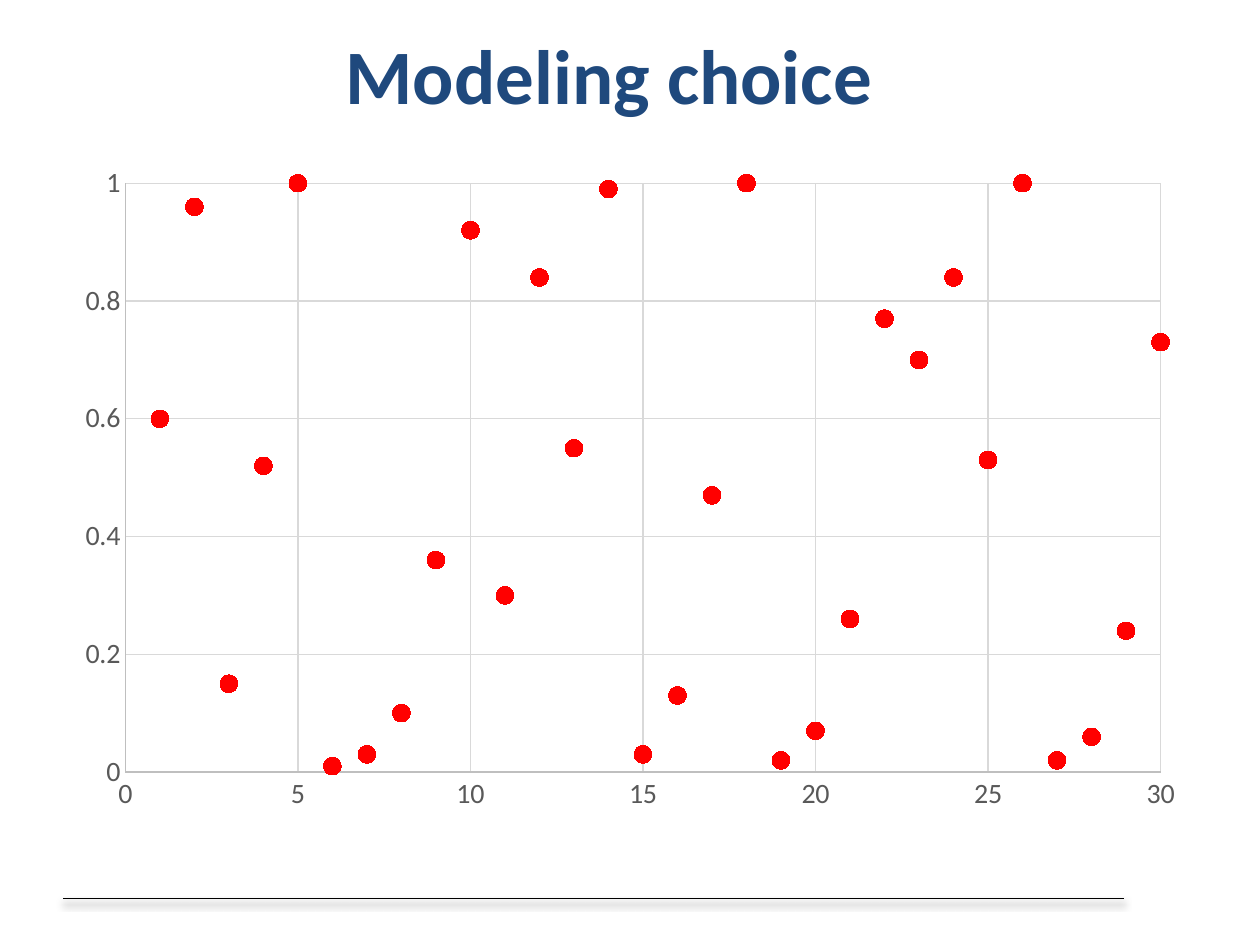
from dataclasses import dataclass

from lxml import etree
from pptx import Presentation
from pptx.chart.data import XyChartData
from pptx.dml.color import RGBColor
from pptx.enum.chart import XL_CHART_TYPE, XL_MARKER_STYLE, XL_TICK_MARK
from pptx.enum.shapes import MSO_CONNECTOR
from pptx.enum.text import MSO_ANCHOR, PP_ALIGN
from pptx.oxml import parse_xml
from pptx.oxml.ns import nsdecls, qn
from pptx.util import Inches, Pt

SCATTER = XL_CHART_TYPE.XY_SCATTER
CIRCLE = XL_MARKER_STYLE.CIRCLE
NO_TICK = XL_TICK_MARK.NONE
STRAIGHT = MSO_CONNECTOR.STRAIGHT
MIDDLE = MSO_ANCHOR.MIDDLE
CENTER = PP_ALIGN.CENTER


@dataclass(frozen=True)
class Theme:
    """Fonts, colours and sizes of the slide."""

    font: str = "Calibri"
    title_color: RGBColor = RGBColor(0x1F, 0x49, 0x7D)
    label_color: RGBColor = RGBColor(0x59, 0x59, 0x59)
    axis_color: RGBColor = RGBColor(0xBF, 0xBF, 0xBF)
    grid_color: RGBColor = RGBColor(0xD9, 0xD9, 0xD9)
    point_color: RGBColor = RGBColor(0xFF, 0x00, 0x00)
    rule_color: RGBColor = RGBColor(0x00, 0x00, 0x00)
    title_size: Pt = Pt(44)
    label_size: Pt = Pt(16)
    line_width: Pt = Pt(0.75)
    marker_size: int = 10


THEME = Theme()
VALUES = [
    0.6, 0.96, 0.15, 0.52, 1, 0.01, 0.03, 0.1, 0.36, 0.92,
    0.3, 0.84, 0.55, 0.99, 0.03, 0.13, 0.47, 1, 0.02, 0.07,
    0.26, 0.77, 0.7, 0.84, 0.53, 1, 0.02, 0.06, 0.24, 0.73,
]
PLOT_LAYOUT = {"x": 0.055, "y": 0.044, "w": 0.913, "h": 0.877}


def style_line(line, color):
    """Give a line its colour and the common width."""
    line.color.rgb = color
    line.width = THEME.line_width


def add_footer_rule(slide, left, top, width):
    """Draw the horizontal rule with its soft shadow below."""
    rule = slide.shapes.add_connector(STRAIGHT, left, top, left + width, top)
    style_line(rule.line, THEME.rule_color)
    effects = (
        f'<a:effectLst {nsdecls("a")}>'
        f'<a:outerShdw blurRad="{Pt(4)}" dist="{Pt(3)}" dir="5400000" rotWithShape="0">'
        f'<a:srgbClr val="{THEME.rule_color}"><a:alpha val="40000"/></a:srgbClr>'
        "</a:outerShdw></a:effectLst>"
    )
    rule._element.spPr.append(parse_xml(effects))


def add_title(slide, left, top, width, height, text):
    """Write the centred slide title."""
    frame = slide.shapes.add_textbox(left, top, width, height).text_frame
    frame.word_wrap = True
    frame.vertical_anchor = MIDDLE
    frame.text = text
    paragraph = frame.paragraphs[0]
    paragraph.alignment = CENTER
    font = paragraph.runs[0].font
    font.name = THEME.font
    font.size = THEME.title_size
    font.bold = True
    font.color.rgb = THEME.title_color


def style_axis(axis, maximum, step, number_format):
    """Set the scale, grid and labels of one axis."""
    axis.minimum_scale = 0
    axis.maximum_scale = maximum
    axis.major_unit = step
    axis.major_tick_mark = NO_TICK
    axis.minor_tick_mark = NO_TICK
    axis.has_title = False
    axis.has_major_gridlines = True
    style_line(axis.major_gridlines.format.line, THEME.grid_color)
    style_line(axis.format.line, THEME.axis_color)
    labels = axis.tick_labels
    labels.number_format = number_format
    labels.number_format_is_linked = False
    labels.font.name = THEME.font
    labels.font.size = THEME.label_size
    labels.font.color.rgb = THEME.label_color


def fix_plot_area(chart):
    """Pin the inner plot area to fixed fractions of the chart."""
    plot_area = chart._chartSpace.chart.plotArea
    for old_layout in plot_area.findall(qn("c:layout")):
        plot_area.remove(old_layout)
    layout = etree.Element(qn("c:layout"))
    manual = etree.SubElement(layout, qn("c:manualLayout"))
    settings = {"layoutTarget": "inner", "xMode": "edge", "yMode": "edge", **PLOT_LAYOUT}
    for name, value in settings.items():
        etree.SubElement(manual, qn(f"c:{name}")).set("val", str(value))
    plot_area.insert(0, layout)


def add_scatter_chart(slide, left, top, width, height):
    """Plot the values against their position as red points."""
    data = XyChartData()
    points = data.add_series("Series 1")
    for position, value in enumerate(VALUES, start=1):
        points.add_data_point(position, value)
    chart = slide.shapes.add_chart(SCATTER, left, top, width, height, data).chart
    chart.has_legend = False
    chart.has_title = False
    chart.font.name = THEME.font
    chart.font.size = THEME.label_size
    style_axis(chart.category_axis, 30, 5, "General")
    style_axis(chart.value_axis, 1, 0.2, "General")
    fix_plot_area(chart)

    plot = chart.plots[0]
    plot.vary_by_categories = False
    series = plot.series[0]
    series.format.line.fill.background()
    marker = series.marker
    marker.style = CIRCLE
    marker.size = THEME.marker_size
    marker.format.fill.solid()
    marker.format.fill.fore_color.rgb = THEME.point_color
    style_line(marker.format.line, THEME.point_color)


def main():
    """Build and save the slide."""
    presentation = Presentation()
    presentation.slide_width = Inches(10)
    presentation.slide_height = Inches(7.5)
    slide = presentation.slides.add_slide(presentation.slide_layouts[6])
    add_footer_rule(slide, Inches(0.5), Inches(7.13), Inches(8.42))
    add_title(slide, Inches(0.67), Inches(0.17), Inches(8.33), Inches(0.83), "Modeling choice")
    add_scatter_chart(slide, Inches(0.5), Inches(1.22), Inches(9), Inches(5.33))
    presentation.save("out.pptx")


if __name__ == "__main__":
    main()
